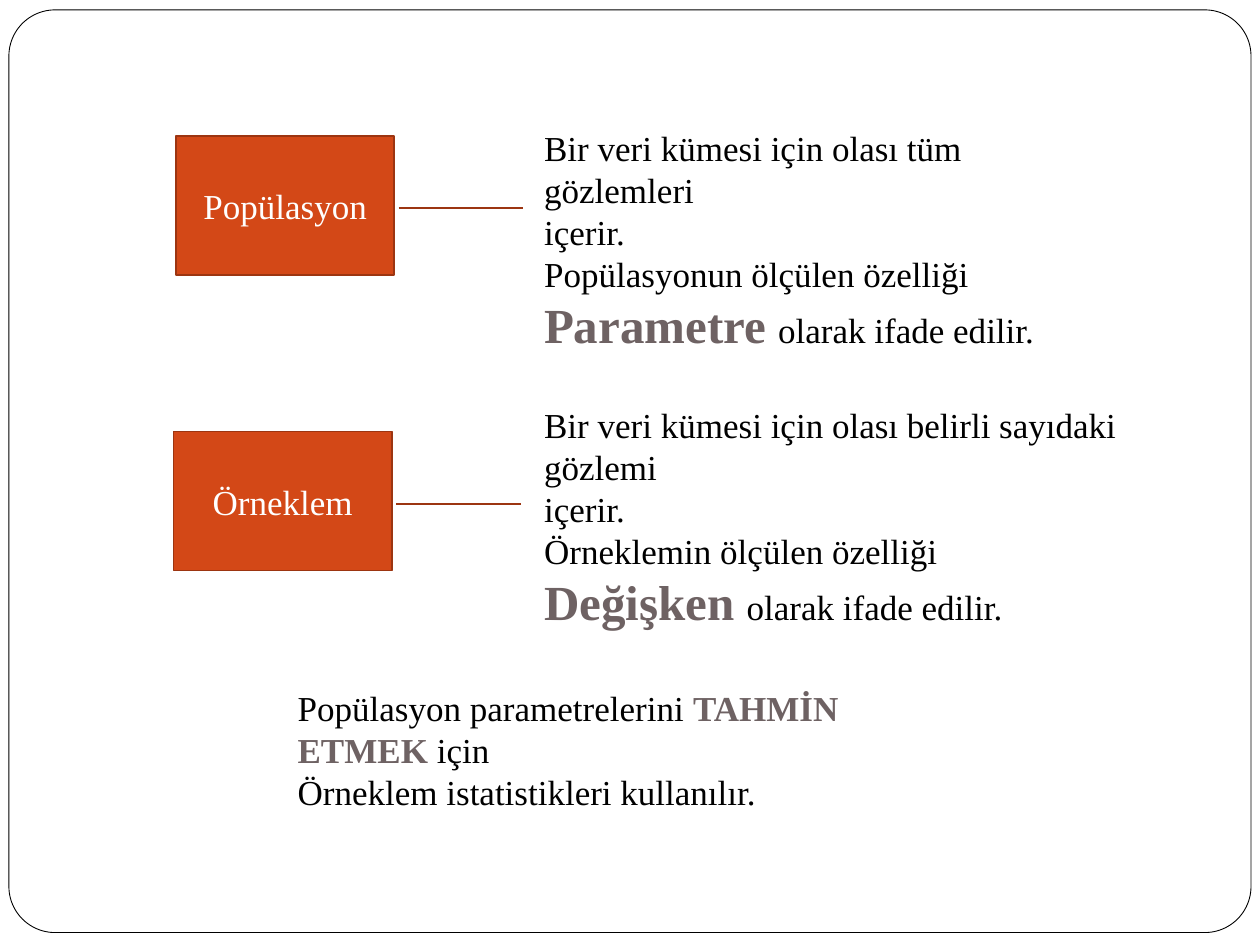
from pptx import Presentation
from pptx.dml.color import RGBColor
from pptx.enum.shapes import MSO_SHAPE
from pptx.enum.text import MSO_ANCHOR, PP_ALIGN
from pptx.util import Cm, Pt


def paint(code):
    return RGBColor.from_string(code)


class Deck:
    font = "Times New Roman"
    size = 20
    black = "000000"
    white = "FFFFFF"
    grey = "6E6263"
    orange = "D34817"
    rust = "9C3511"

    def __init__(self):
        self.show = Presentation()
        self.show.slide_width = Cm(25.4)
        self.show.slide_height = Cm(19.05)
        self.slide = self.show.slides.add_slide(self.show.slide_layouts[6])

    def style(self, run, color, size=size, bold=False):
        run.font.name = self.font
        run.font.size = Pt(size)
        run.font.bold = bold
        run.font.color.rgb = paint(color)

    def shape(self, kind, place, fill, line, width, turns):
        item = self.slide.shapes.add_shape(kind, *map(Cm, place))
        item.shadow.inherit = False
        item.fill.solid()
        item.fill.fore_color.rgb = paint(fill)
        item.line.color.rgb = paint(line)
        item.line.width = Pt(width)
        for index, turn in enumerate(turns):
            item.adjustments[index] = turn
        return item

    def frame(self, *place):
        self.shape(MSO_SHAPE.ROUNDED_RECTANGLE, place, self.white, self.black, 0.5, [0.05])

    def callout(self, label, left, top):
        turns = [0.52, 1.02, 0.52, 1.25, 0.52, 1.59]
        item = self.shape(MSO_SHAPE.LINE_CALLOUT_2, (left, top, 4.4, 2.8),
                          self.orange, self.rust, 1, turns)
        text = item.text_frame
        text.text = label
        text.vertical_anchor = MSO_ANCHOR.MIDDLE
        para = text.paragraphs[0]
        para.alignment = PP_ALIGN.CENTER
        self.style(para.runs[0], self.white)

    def note(self, lines, left, top, width, height, large=size):
        box = self.slide.shapes.add_textbox(*map(Cm, (left, top, width, height)))
        text = box.text_frame
        text.word_wrap = True
        for index, line in enumerate(lines):
            para = text.paragraphs[0] if index == 0 else text.add_paragraph()
            for order, piece in enumerate(line.split("*")):
                if not piece:
                    continue
                run = para.add_run()
                run.text = piece
                if order % 2:
                    self.style(run, self.grey, large, True)
                else:
                    self.style(run, self.black)

    def save(self):
        self.show.save("out.pptx")


def main():
    deck = Deck()
    deck.frame(0.18, 0.2, 25.04, 18.6)
    topics = [
        ("Popülasyon", "olası tüm gözlemleri", "Popülasyonun", "Parametre", 3.55, 2.74, 2.42, 11.25),
        ("Örneklem", "olası belirli sayıdaki gözlemi", "Örneklemin", "Değişken", 3.5, 8.7, 8.01, 12.98),
    ]
    for label, scope, owner, term, left, top, head, width in topics:
        deck.callout(label, left, top)
        lines = [
            f"Bir veri kümesi için {scope}",
            "içerir.",
            f"{owner} ölçülen özelliği",
            f"*{term} *olarak ifade edilir.",
        ]
        deck.note(lines, 10.72, head, width, 4.8, 28)
    goal = ["Popülasyon parametrelerini *TAHMİN ETMEK *için", "Örneklem istatistikleri kullanılır."]
    deck.note(goal, 5.75, 13.71, 14, 2.8)
    deck.save()


if __name__ == "__main__":
    main()
